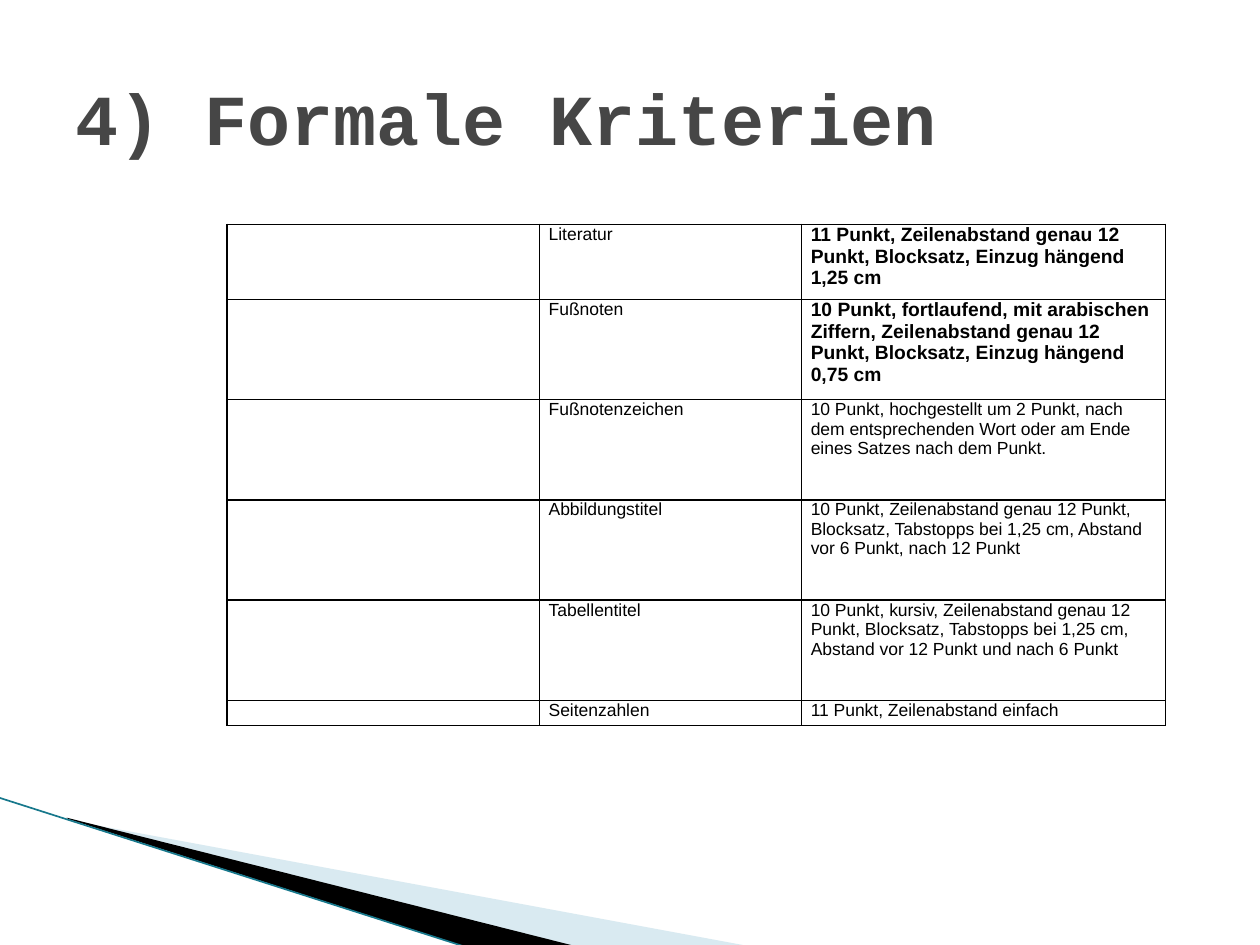
import lxml.etree
import pptx
import pptx.dml.color
import pptx.enum.shapes
import pptx.enum.text
import pptx.oxml.ns
import pptx.util

WIDTH, HEIGHT = 10, 7.5
COLORS = {
    "title": "464646",
    "text": "000000",
    "paper": "FFFFFF",
    "black": "000000",
    "pale": "A0CBDC",
    "teal": "17788C",
}
COLUMNS = [2.48, 2.08, 2.89]
TABLE_HEIGHT = 3.98
# Element, rule, share of the table height, emphasised
CRITERIA = [
    ("Literatur", "11 Punkt, Zeilenabstand genau 12 Punkt, Blocksatz, "
     "Einzug hängend 1,25 cm", 0.15, True),
    ("Fußnoten", "10 Punkt, fortlaufend, mit arabischen Ziffern, "
     "Zeilenabstand genau 12 Punkt, Blocksatz, Einzug hängend 0,75 cm", 0.2, True),
    ("Fußnotenzeichen", "10 Punkt, hochgestellt um 2 Punkt, nach dem "
     "entsprechenden Wort oder am Ende eines Satzes nach dem Punkt.", 0.2, False),
    ("Abbildungstitel", "10 Punkt, Zeilenabstand genau 12 Punkt, Blocksatz, "
     "Tabstopps bei 1,25 cm, Abstand vor 6 Punkt, nach 12 Punkt", 0.2, False),
    ("Tabellentitel", "10 Punkt, kursiv, Zeilenabstand genau 12 Punkt, Blocksatz, "
     "Tabstopps bei 1,25 cm, Abstand vor 12 Punkt und nach 6 Punkt", 0.2, False),
    ("Seitenzahlen", "11 Punkt, Zeilenabstand einfach", 0.05, False),
]


def inches(*values):
    return [pptx.util.Inches(value) for value in values]


def rgb(name):
    return pptx.dml.color.RGBColor.from_string(COLORS[name])


def sub(parent, tag, **attributes):
    return lxml.etree.SubElement(parent, pptx.oxml.ns.qn(tag), attributes)


def add_span(para, text, size, font, color, bold):
    span = para.add_run()
    span.text = text
    span.font.size = pptx.util.Pt(size)
    span.font.name = font
    span.font.bold = bold
    span.font.color.rgb = rgb(color)


def add_wedge(page, points, color, opacity=100):
    # The builder rounds to whole units, so points are given in EMU
    corners = [inches(*point) for point in points]
    builder = page.shapes.build_freeform(*corners[0])
    builder.add_line_segments(corners[1:], close=True)
    wedge = builder.convert_to_shape()
    wedge.shadow.inherit = False
    wedge.line.fill.background()
    wedge.fill.solid()
    wedge.fill.fore_color.rgb = rgb(color)
    if opacity < 100:
        tint = wedge._element.spPr.find(".//" + pptx.oxml.ns.qn("a:srgbClr"))
        sub(tint, "a:alpha", val=str(opacity * 1000))


def add_edge(page, start, end, color):
    edge = page.shapes.add_connector(
        pptx.enum.shapes.MSO_CONNECTOR.STRAIGHT, *inches(*start, *end))
    edge.line.color.rgb = rgb(color)
    edge.line.width = pptx.util.Pt(0.95)
    sub(edge._element.spPr, "a:effectLst")


def set_title(page, text):
    title = page.shapes.title
    title.left, title.top, title.width, title.height = inches(0.5, 0.3, 9, 1.25)
    title.text_frame.vertical_anchor = pptx.enum.text.MSO_ANCHOR.MIDDLE
    para = title.text_frame.paragraphs[0]
    para.alignment = pptx.enum.text.PP_ALIGN.LEFT
    add_span(para, text, 41, "Courier New", "title", True)


def fill_cell(cell, text, size=10, bold=False):
    cell.margin_left = cell.margin_right = pptx.util.Pt(5.4)
    cell.margin_top = cell.margin_bottom = 0
    para = cell.text_frame.paragraphs[0]
    if text:
        add_span(para, text, size, "Arial", "text", bold)
    else:
        # Keeps an empty cell as low as its row
        sub(para._p, "a:endParaRPr", sz=str(size * 100))
    # Borders come before the fill in the cell's properties
    properties = cell._tc.get_or_add_tcPr()
    for side in ("a:lnL", "a:lnR", "a:lnT", "a:lnB"):
        border = sub(properties, side, w=str(pptx.util.Pt(1)))
        sub(sub(border, "a:solidFill"), "a:srgbClr", val=COLORS["black"])
    cell.fill.solid()
    cell.fill.fore_color.rgb = rgb("paper")


def add_criteria(page):
    table = page.shapes.add_table(
        len(CRITERIA), len(COLUMNS),
        *inches(1.8, 1.78, sum(COLUMNS), TABLE_HEIGHT)).table
    table.first_row = table.horz_banding = False
    for column, width in zip(table.columns, COLUMNS):
        column.width = pptx.util.Inches(width)
    for row, (element, rule, share, strong) in zip(table.rows, CRITERIA):
        row.height = pptx.util.Inches(share * TABLE_HEIGHT)
        blank_cell, element_cell, rule_cell = row.cells
        fill_cell(blank_cell, "")
        fill_cell(element_cell, element)
        fill_cell(rule_cell, rule, 11 if strong else 10, strong)


def main():
    deck = pptx.Presentation()
    deck.slide_width, deck.slide_height = inches(WIDTH, HEIGHT)
    page = deck.slides.add_slide(deck.slide_layouts[5])

    # Corner decoration
    add_wedge(page, [(0.55, 6.51), (5.95, 7.51), (4.56, 7.51), (0.55, 6.5)],
              "pale", 40)
    add_wedge(page, [(0.53, 6.49), (4.57, 7.51), (3.72, 7.52), (0.54, 6.5)],
              "black")
    add_edge(page, (-0.01, 6.33), (3.71, 7.52), "teal")

    # Content
    add_criteria(page)
    set_title(page, "4) Formale Kriterien")
    deck.save("out.pptx")


if __name__ == "__main__":
    main()
